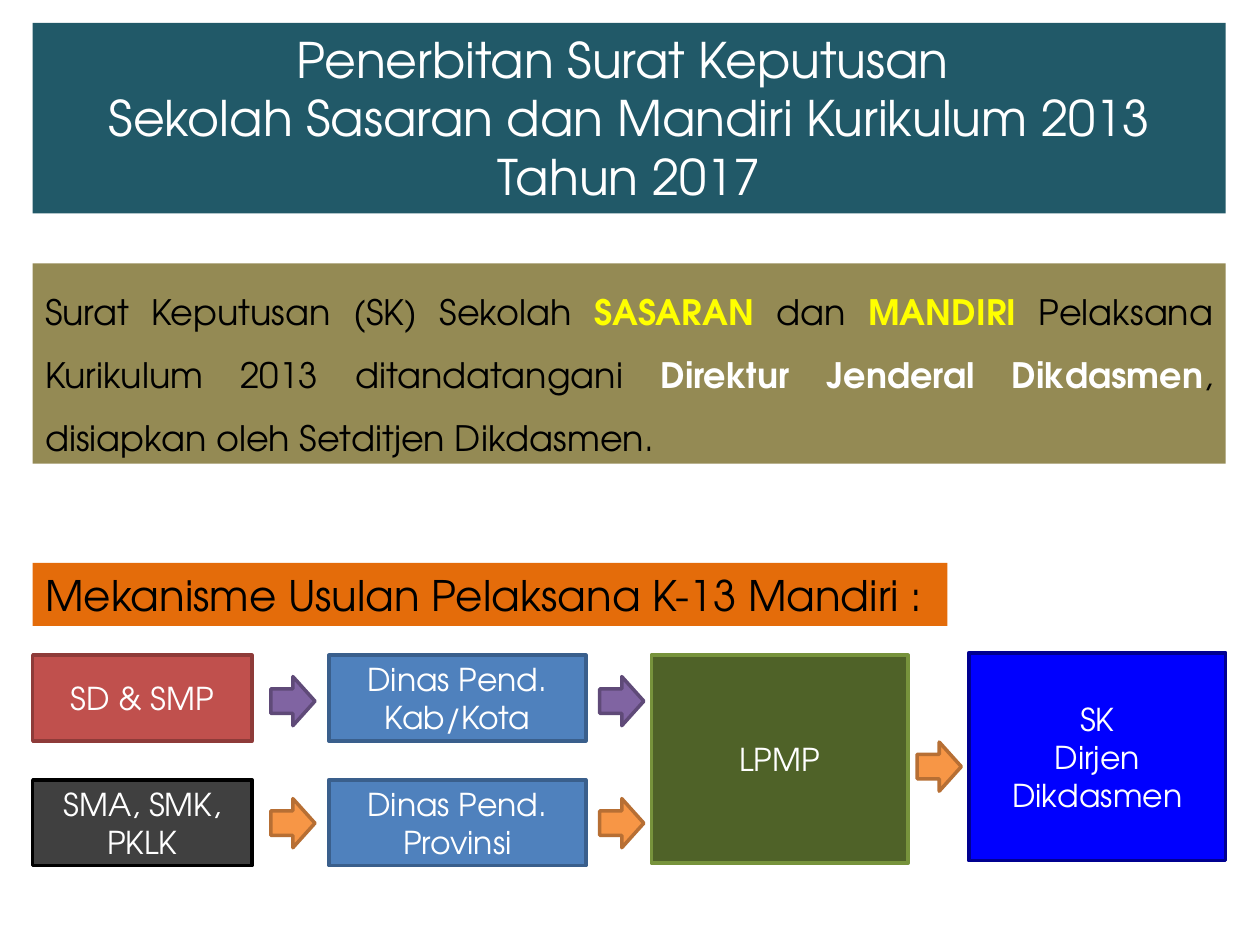
from pptx import Presentation
from pptx.dml.color import RGBColor
from pptx.enum.shapes import MSO_SHAPE
from pptx.enum.text import MSO_ANCHOR, MSO_AUTO_SIZE, PP_ALIGN
from pptx.util import Cm, Pt

RECTANGLE, RIGHT_ARROW = MSO_SHAPE.RECTANGLE, MSO_SHAPE.RIGHT_ARROW
TOP, MIDDLE = MSO_ANCHOR.TOP, MSO_ANCHOR.MIDDLE
LEFT, CENTER, JUSTIFY = PP_ALIGN.LEFT, PP_ALIGN.CENTER, PP_ALIGN.JUSTIFY
NO_AUTOFIT = MSO_AUTO_SIZE.NONE

WHITE = RGBColor(0xFF, 0xFF, 0xFF)
BLACK = RGBColor(0x00, 0x00, 0x00)
YELLOW = RGBColor(0xFF, 0xFF, 0x00)
TEAL = RGBColor(0x21, 0x59, 0x68)
OLIVE = RGBColor(0x94, 0x8A, 0x54)
DARK_ORANGE = RGBColor(0xE4, 0x6C, 0x0A)
RED = RGBColor(0xC0, 0x50, 0x4D)
DARK_RED = RGBColor(0x8E, 0x3B, 0x39)
GRAY = RGBColor(0x40, 0x40, 0x40)
BLUE = RGBColor(0x4F, 0x81, 0xBD)
DARK_BLUE = RGBColor(0x3A, 0x5F, 0x8C)
GREEN = RGBColor(0x4F, 0x62, 0x28)
LIGHT_GREEN = RGBColor(0x77, 0x93, 0x3C)
PURE_BLUE = RGBColor(0x00, 0x00, 0xFF)
NAVY = RGBColor(0x00, 0x00, 0x90)
PURPLE = (RGBColor(0x80, 0x64, 0xA2), RGBColor(0x5F, 0x4A, 0x78))
ORANGE = (RGBColor(0xF7, 0x96, 0x46), RGBColor(0xB7, 0x6F, 0x34))


def write_text(shape, paragraphs, font="TeX Gyre Adventor", size=18, color=WHITE,
               align=CENTER, anchor=MIDDLE, spacing=1.0, wrap=True):
    frame = shape.text_frame
    frame.auto_size = NO_AUTOFIT
    frame.word_wrap = wrap
    frame.vertical_anchor = anchor
    for index, runs in enumerate(paragraphs):
        paragraph = frame.add_paragraph() if index else frame.paragraphs[0]
        paragraph.alignment = align
        paragraph.line_spacing = spacing
        if isinstance(runs, str):
            runs = [(runs, color, False)]
        for text, run_color, bold in runs:
            run = paragraph.add_run()
            run.text = text
            run.font.name = font
            run.font.size = Pt(size)
            run.font.bold = bold
            run.font.color.rgb = run_color


class SlideBuilder:
    line_width = Pt(2)
    arrow_width, arrow_height = 0.89, 0.99

    def __init__(self, presentation):
        self.slide = presentation.slides.add_slide(presentation.slide_layouts[5])

    def title(self, left, top, width, height, paragraphs, fill, **text_format):
        shape = self.slide.shapes.title
        shape.left, shape.top = Cm(left), Cm(top)
        shape.width, shape.height = Cm(width), Cm(height)
        shape.fill.solid()
        shape.fill.fore_color.rgb = fill
        write_text(shape, paragraphs, **text_format)

    def shape(self, kind, left, top, width, height, fill, line=None):
        shape = self.slide.shapes.add_shape(kind, Cm(left), Cm(top), Cm(width), Cm(height))
        shape.shadow.inherit = False
        shape.fill.solid()
        shape.fill.fore_color.rgb = fill
        if line is None:
            shape.line.fill.background()
        else:
            shape.line.color.rgb = line
            shape.line.width = self.line_width
        return shape

    def box(self, left, top, width, height, paragraphs, fill, line=None, **text_format):
        shape = self.shape(RECTANGLE, left, top, width, height, fill, line)
        write_text(shape, paragraphs, **text_format)

    def arrow(self, left, top, colors):
        self.shape(RIGHT_ARROW, left, top, self.arrow_width, self.arrow_height, *colors)


def main():
    presentation = Presentation()
    presentation.slide_width, presentation.slide_height = Cm(25.4), Cm(19.05)
    builder = SlideBuilder(presentation)

    margin, full_width = 0.66, 24.05
    builder.title(margin, 0.46, full_width, 3.84,
                  ["Penerbitan Surat Keputusan ",
                   "Sekolah Sasaran dan Mandiri Kurikulum 2013",
                   "Tahun 2017"],
                  TEAL, size=28, anchor=TOP)
    decree = [
        ("Surat Keputusan (SK) Sekolah ", BLACK, False),
        ("SASARAN ", YELLOW, True),
        ("dan ", BLACK, False),
        ("MANDIRI ", YELLOW, True),
        ("Pelaksana Kurikulum 2013 ditandatangani ", BLACK, False),
        ("Direktur Jenderal Dikdasmen", WHITE, True),
        (", disiapkan oleh Setditjen Dikdasmen.", BLACK, False),
    ]
    builder.box(margin, 5.31, full_width, 4.04, [decree], OLIVE,
                size=20, align=JUSTIFY, anchor=TOP, spacing=1.5)
    builder.box(margin, 11.35, 18.44, 1.27, ["Mekanisme Usulan Pelaksana K-13 Mandiri :"],
                DARK_ORANGE, size=24, color=BLACK, align=LEFT, anchor=TOP, wrap=False)

    box_height, school_width, office_width, tall_height = 1.73, 4.42, 5.18, 4.19
    rows = [
        (13.21, 13.64, "SD & SMP", RED, DARK_RED, "Dinas Pend. Kab/Kota", PURPLE),
        (15.72, 16.1, "SMA, SMK, PKLK", GRAY, BLACK, "Dinas Pend. Provinsi", ORANGE),
    ]
    for top, arrow_top, school, fill, line, office, arrow_colors in rows:
        builder.box(margin, top, school_width, box_height, [school], fill, line)
        builder.box(6.63, top, office_width, box_height, [office], BLUE, DARK_BLUE)
        for arrow_left in (5.46, 12.09):
            builder.arrow(arrow_left, arrow_top, arrow_colors)

    builder.box(13.13, 13.21, office_width, tall_height, ["LPMP"], GREEN, LIGHT_GREEN)
    builder.box(19.53, 13.16, office_width, tall_height, ["SK", "Dirjen Dikdasmen"],
                PURE_BLUE, NAVY)
    builder.arrow(18.49, 14.96, ORANGE)

    presentation.save("out.pptx")


if __name__ == "__main__":
    main()
